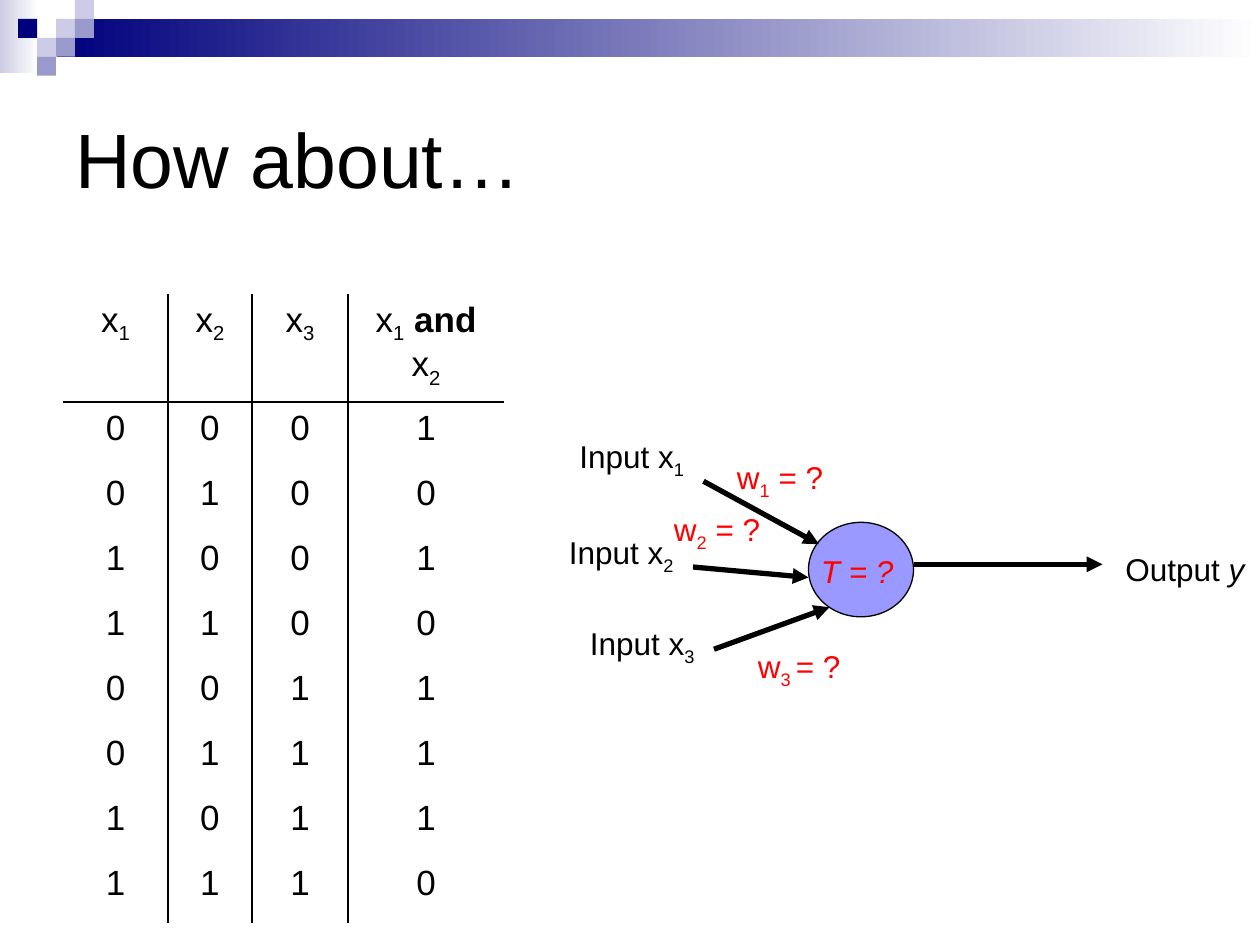
from dataclasses import dataclass

import lxml.etree
import pptx
import pptx.dml.color
import pptx.enum.shapes
import pptx.enum.text
import pptx.oxml.ns
import pptx.util

Pt = pptx.util.Pt
qn = pptx.oxml.ns.qn
SHAPES = pptx.enum.shapes.MSO_SHAPE
ALIGN = pptx.enum.text.PP_ALIGN
ANCHOR = pptx.enum.text.MSO_ANCHOR


@dataclass(frozen=True)
class Theme:
    font: str = "Arial"
    ink: str = "000000"
    unknown: str = "FF0000"
    paper: str = "FFFFFF"
    navy: str = "00007D"
    mid: str = "9999CC"
    pale: str = "CCCCE6"
    neuron: str = "9999FF"
    title_size: int = 44
    table_size: int = 20
    label_size: int = 18


THEME = Theme()


def rgb(value):
    return pptx.dml.color.RGBColor.from_string(value)


def write_runs(paragraph, runs, size, color):
    """Write (text, style) pairs; style is "", "sub", "bold" or "italic"."""
    for text, style in runs:
        run = paragraph.add_run()
        run.text = text
        run.font.name = THEME.font
        run.font.size = Pt(size)
        run.font.color.rgb = rgb(color)
        if style == "sub":
            run._r.get_or_add_rPr().set("baseline", "-25000")
        elif style == "bold":
            run.font.bold = True
        elif style == "italic":
            run.font.italic = True


def add_label(slide, box, runs, size=THEME.label_size, color=THEME.ink, anchor=ANCHOR.TOP):
    label = slide.shapes.add_textbox(*map(Pt, box))
    label.text_frame.word_wrap = True
    label.text_frame.vertical_anchor = anchor
    write_runs(label.text_frame.paragraphs[0], runs, size, color)


def add_block(slide, box, color, fade_to=None):
    block = slide.shapes.add_shape(SHAPES.RECTANGLE, *map(Pt, box))
    block.shadow.inherit = False
    block.line.fill.background()
    if fade_to is None:
        block.fill.solid()
        block.fill.fore_color.rgb = rgb(color)
    else:
        block.fill.gradient()
        block.fill.gradient_angle = 0
        for stop, shade in zip(block.fill.gradient_stops, (color, fade_to)):
            stop.color.rgb = rgb(shade)


def add_arrow(slide, start, end):
    arrow = slide.shapes.add_connector(
        pptx.enum.shapes.MSO_CONNECTOR.STRAIGHT, *map(Pt, (*start, *end)))
    arrow.line.color.rgb = rgb(THEME.ink)
    arrow.line.width = Pt(3)
    lxml.etree.SubElement(arrow.line._get_or_add_ln(), qn("a:tailEnd"), type="triangle")
    lxml.etree.SubElement(arrow._element.spPr, qn("a:effectLst"))


def add_banner(slide, box):
    """Fading bars with a mosaic of small squares at the left end."""
    left, top, width, height = box
    side = 10.8
    mosaic_left = left + 10.4
    bar_left = left + 32.6
    add_block(slide, (left, top, 22, height), THEME.pale, THEME.paper)
    add_block(slide, (bar_left, top + side, left + width - bar_left, 2 * side),
              THEME.navy, THEME.paper)
    squares = [(2, 1, THEME.pale), (3, 0, THEME.pale), (3, 1, THEME.mid), (1, 2, THEME.pale),
               (0, 1, THEME.navy), (2, 2, THEME.mid), (1, 3, THEME.mid)]
    for column, row, color in squares:
        add_block(slide, (mosaic_left + column * side, top + row * side, side, side), color)


def set_borders(cell, ruled_edges):
    """Draw the named edges (of L, R, T, B) and clear the others."""
    properties = cell._tc.get_or_add_tcPr()
    for position, edge in enumerate("LRTB"):
        line = lxml.etree.Element(qn("a:ln" + edge), w=str(Pt(1)))
        if edge in ruled_edges:
            fill = lxml.etree.SubElement(line, qn("a:solidFill"))
            lxml.etree.SubElement(fill, qn("a:srgbClr"), val=THEME.ink)
        else:
            lxml.etree.SubElement(line, qn("a:noFill"))
        properties.insert(position, line)


def add_truth_table(slide, box):
    header = [[("x", ""), (str(i), "sub")] for i in (1, 2, 3)]
    header.append([*header[0], (" and ", "bold"), *header[1]])
    values = ["0001", "0100", "1001", "1100", "0011", "0111", "1011", "1110"]
    rows = [header] + [[[(digit, "")] for digit in row] for row in values]
    header_height = 58.3
    row_height = (box[3] - header_height) / len(values)

    table = slide.shapes.add_table(len(rows), len(header), *map(Pt, box)).table
    table.first_row = table.horz_banding = False
    for column, width in zip(table.columns, (60, 48, 55, 89)):
        column.width = Pt(width)
    for r, row in enumerate(rows):
        table.rows[r].height = Pt(row_height if r else header_height)
        for c, runs in enumerate(row):
            cell = table.cell(r, c)
            cell.fill.background()
            edges = ("L" if c > 0 else "") + ("R" if c < len(row) - 1 else "")
            edges += {0: "B", 1: "T"}.get(r, "")
            set_borders(cell, edges)
            paragraph = cell.text_frame.paragraphs[0]
            paragraph.alignment = ALIGN.CENTER
            write_runs(paragraph, runs, THEME.table_size, THEME.ink)


def add_perceptron(slide, box):
    left, top = box[:2]
    label_height = 29

    def at(x, y):
        return left + x, top + y

    # Neuron with its threshold
    neuron = slide.shapes.add_shape(SHAPES.OVAL, *map(Pt, (*at(144, 52.5), 60, 54)))
    neuron.shadow.inherit = False
    neuron.fill.solid()
    neuron.fill.fore_color.rgb = rgb(THEME.neuron)
    neuron.line.color.rgb = rgb(THEME.ink)
    neuron.line.width = Pt(0.75)
    add_label(slide, (*at(144, 66), 126, label_height), [("T = ?", "italic")],
              color=THEME.unknown)

    # Output
    add_arrow(slide, at(204, 76.5), at(312, 76.5))
    add_label(slide, (*at(288 + 30, 65), 108, label_height), [("Output ", ""), ("y", "italic")])

    # Inputs: label, weight, arrow start and arrow end
    inputs = [((6, 0), (96, 12), (84, 29), (150, 65)),
              ((0, 55), (60, 42), (78, 78), (144, 84)),
              ((12, 107), (108, 120), (90, 125), (156, 101))]
    for number, (label, weight, start, end) in enumerate(inputs, 1):
        index = (str(number), "sub")
        gap = (" ", "sub" if number == 3 else "")
        add_arrow(slide, at(*start), at(*end))
        add_label(slide, (*at(*label), 90, label_height), [("Input x", ""), index])
        add_label(slide, (*at(*weight), 108, label_height),
                  [("w", ""), index, gap, ("= ?", "")], color=THEME.unknown)


def main():
    deck = pptx.Presentation()
    deck.slide_width, deck.slide_height = Pt(720), Pt(540)
    slide = deck.slides.add_slide(deck.slide_layouts[6])

    add_banner(slide, (0, 0, 720, 42))
    add_label(slide, (36, 36, 648, 108), [("How about…", "")],
              size=THEME.title_size, anchor=ANCHOR.MIDDLE)
    add_truth_table(slide, (36, 168, 252, 356))
    add_perceptron(slide, (318, 246, 396, 149))

    deck.save("out.pptx")


if __name__ == "__main__":
    main()
